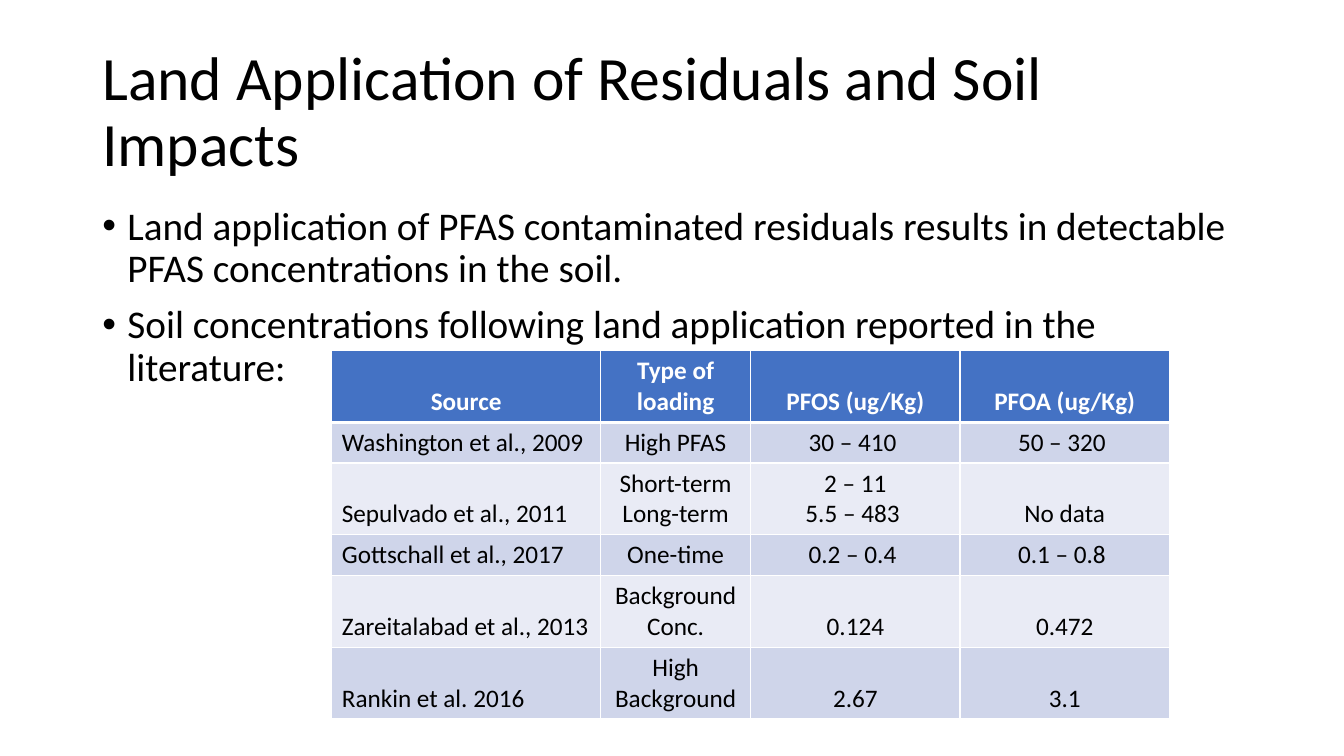
from dataclasses import dataclass

from lxml.etree import SubElement
from pptx import Presentation
from pptx.dml.color import RGBColor
from pptx.enum.text import MSO_ANCHOR, PP_ALIGN
from pptx.oxml.ns import qn
from pptx.util import Pt


@dataclass(frozen=True)
class Theme:
    """Fonts, type sizes and colours of the slide."""
    font: str = "Calibri"
    title_size: int = 44
    body_size: int = 28
    table_size: int = 18
    text: str = "000000"
    header_text: str = "FFFFFF"
    header_fill: str = "4472C4"
    bands: tuple = ("CFD5EA", "E9EBF5")
    border: str = "FFFFFF"


class SlideBuilder:
    """Adds styled elements to one slide."""

    def __init__(self, slide, theme):
        self.slide = slide
        self.theme = theme

    def style(self, paragraph, size, color, bold=False):
        """Set the font of a paragraph."""
        paragraph.font.name = self.theme.font
        paragraph.font.size = Pt(size)
        paragraph.font.bold = bold
        paragraph.font.color.rgb = RGBColor.from_string(color)

    def text_box(self, box, anchor):
        """Add a wrapping text box and return its text frame."""
        frame = self.slide.shapes.add_textbox(*map(Pt, box)).text_frame
        frame.word_wrap = True
        frame.vertical_anchor = anchor
        return frame

    def title(self, text, box):
        """Add the slide title."""
        paragraph = self.text_box(box, MSO_ANCHOR.MIDDLE).paragraphs[0]
        paragraph.text = text
        paragraph.line_spacing = 0.9
        self.style(paragraph, self.theme.title_size, self.theme.text)

    def bullets(self, texts, box, indent=18, gap=10):
        """Add a bulleted list."""
        frame = self.text_box(box, MSO_ANCHOR.TOP)
        for index, text in enumerate(texts):
            paragraph = frame.add_paragraph() if index else frame.paragraphs[0]
            paragraph.text = text
            paragraph.line_spacing = 0.9
            paragraph.space_before = Pt(gap if index else 0)
            properties = paragraph._p.get_or_add_pPr()
            properties.set("marL", str(Pt(indent)))
            properties.set("indent", str(-Pt(indent)))
            SubElement(properties, qn("a:buFont"), typeface="Arial")
            SubElement(properties, qn("a:buChar"), char="•")
            self.style(paragraph, self.theme.body_size, self.theme.text)

    def borders(self, cell, top, bottom):
        """Draw the four borders of a cell."""
        properties = cell._tc.get_or_add_tcPr()
        widths = {"a:lnL": 1, "a:lnR": 1, "a:lnT": top, "a:lnB": bottom}
        for index, (tag, width) in enumerate(widths.items()):
            line = SubElement(properties, qn(tag), w=str(Pt(width)))
            fill = SubElement(line, qn("a:solidFill"))
            SubElement(fill, qn("a:srgbClr"), val=self.theme.border)
            properties.insert(index, line)

    def cell(self, cell, text, row, column):
        """Fill one table cell."""
        theme = self.theme
        header = row == 0
        fill = theme.header_fill if header else theme.bands[(row - 1) % 2]
        cell.fill.solid()
        cell.fill.fore_color.rgb = RGBColor.from_string(fill)
        cell.vertical_anchor = MSO_ANCHOR.BOTTOM
        cell.text = text
        for paragraph in cell.text_frame.paragraphs:
            left = column == 0 and not header
            paragraph.alignment = PP_ALIGN.LEFT if left else PP_ALIGN.CENTER
            color = theme.header_text if header else theme.text
            self.style(paragraph, theme.table_size, color, header)
        self.borders(cell, 3 if row == 1 else 1, 3 if header else 1)

    def table(self, rows, left, top, widths, heights):
        """Add a banded table with a header row."""
        frame = self.slide.shapes.add_table(
            len(rows), len(widths), Pt(left), Pt(top),
            Pt(sum(widths)), Pt(sum(heights)))
        table = frame.table
        for column, width in zip(table.columns, widths):
            column.width = Pt(width)
        for row, height in zip(table.rows, heights):
            row.height = Pt(height)
        for row, texts in enumerate(rows):
            for column, text in enumerate(texts):
                self.cell(table.cell(row, column), text, row, column)


TITLE = "Land Application of Residuals and Soil Impacts"
BULLETS = [
    "Land application of PFAS contaminated residuals results in detectable "
    "PFAS concentrations in the soil.",
    "Soil concentrations following land application reported in the literature:",
]
SOIL_CONCENTRATIONS = [
    ("Source", "Type of loading", "PFOS (ug/Kg)", "PFOA (ug/Kg)"),
    ("Washington et al., 2009", "High PFAS", "30 – 410 ", "50 – 320 "),
    ("Sepulvado et al., 2011", "Short-term\nLong-term",
     "2 – 11\n5.5 – 483 ", "No data"),
    ("Gottschall et al., 2017", "One-time", "0.2 – 0.4 ", "0.1 – 0.8 "),
    ("Zareitalabad et al., 2013", "Background\nConc.", "0.124", "0.472"),
    ("Rankin et al. 2016", "High Background", "2.67", "3.1"),
]


def main():
    """Build and save the presentation."""
    presentation = Presentation()
    presentation.slide_width = Pt(960)
    presentation.slide_height = Pt(540)
    slide = presentation.slides.add_slide(presentation.slide_layouts[6])
    builder = SlideBuilder(slide, Theme())
    builder.title(TITLE, (66, 28.75, 828, 104.4))
    builder.bullets(BULLETS, (66, 143.75, 828, 367.2))
    one_line, two_lines = 29.1, 51.2
    builder.table(
        SOIL_CONCENTRATIONS, 237, 250.5, (192, 107.2, 149.6, 149.6),
        (two_lines, one_line, two_lines, one_line, two_lines, two_lines))
    presentation.save("out.pptx")


if __name__ == "__main__":
    main()
